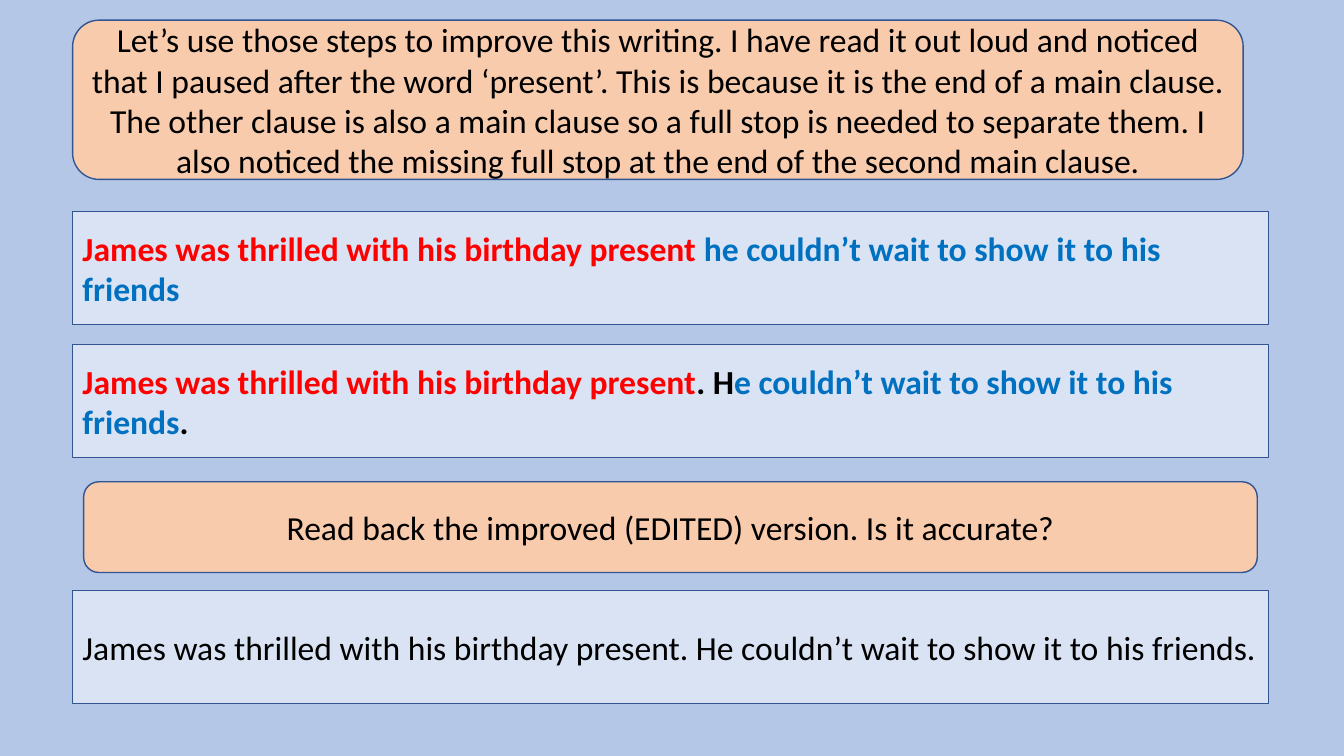
from pptx import Presentation
from pptx.dml.color import RGBColor
from pptx.enum.shapes import MSO_SHAPE as Shape
from pptx.enum.text import MSO_ANCHOR as Anchor, PP_ALIGN as Align
from pptx.util import Inches, Pt

COLORS = {
    "background": "B4C7E7",
    "instruction": "F8CBAD",
    "sentence": "DAE3F3",
    "outline": "325491",
    "first clause": "FF0000",
    "second clause": "0070C0",
    "plain": "000000",
}

STEPS = (
    "Let’s use those steps to improve this writing. I have read it out loud and "
    "noticed that I paused after the word ‘present’. This is because it is the end "
    "of a main clause. The other clause is also a main clause so a full stop is "
    "needed to separate them. I also noticed the missing full stop at the end of "
    "the second main clause."
)
CHECK = "Read back the improved (EDITED) version. Is it accurate?"
DRAFT = [
    ("James was thrilled with his birthday present ", "first clause"),
    ("he couldn’t wait to show it to his friends", "second clause"),
]
CORRECTED = [
    ("James was thrilled with his birthday present", "first clause"),
    (". H", "plain"),
    ("e couldn’t wait to show it to his friends", "second clause"),
    (".", "plain"),
]
EDITED = [(
    "James was thrilled with his birthday present. "
    "He couldn’t wait to show it to his friends.", "plain",
)]


def color(name):
    return RGBColor.from_string(COLORS[name])


def add_box(slide, outline, fill, left, top, width, height, parts, align, bold=False):
    """Add a filled box holding one paragraph of (text, colour name) parts."""
    box = slide.shapes.add_shape(
        outline, Inches(left), Inches(top), Inches(width), Inches(height))
    box.shadow.inherit = False
    box.fill.solid()
    box.fill.fore_color.rgb = color(fill)
    box.line.color.rgb = color("outline")
    box.line.width = Pt(1)

    frame = box.text_frame
    frame.word_wrap = True
    frame.vertical_anchor = Anchor.MIDDLE
    paragraph = frame.paragraphs[0]
    paragraph.alignment = align
    paragraph.font.name = "Calibri"
    paragraph.font.size = Pt(24)
    paragraph.font.bold = bold
    for text, ink in parts:
        run = paragraph.add_run()
        run.text = text
        run.font.color.rgb = color(ink)


def add_instruction(slide, left, top, width, height, text):
    add_box(slide, Shape.ROUNDED_RECTANGLE, "instruction", left, top, width, height,
            [(text, "plain")], Align.CENTER)


def add_sentence(slide, top, parts, bold=False):
    add_box(slide, Shape.RECTANGLE, "sentence", 0.72, top, 11.86, 1.12,
            parts, Align.LEFT, bold)


def main():
    prs = Presentation()
    prs.slide_width = Inches(13.33)
    prs.slide_height = Inches(7.5)
    slide = prs.slides.add_slide(prs.slide_layouts[6])
    slide.background.fill.solid()
    slide.background.fill.fore_color.rgb = color("background")

    add_instruction(slide, 0.72, 0.2, 11.61, 1.58, STEPS)
    add_sentence(slide, 2.1, DRAFT, bold=True)
    add_sentence(slide, 3.42, CORRECTED, bold=True)
    add_instruction(slide, 0.83, 4.78, 11.64, 0.9, CHECK)
    add_sentence(slide, 5.86, EDITED)
    prs.save("out.pptx")


if __name__ == "__main__":
    main()
